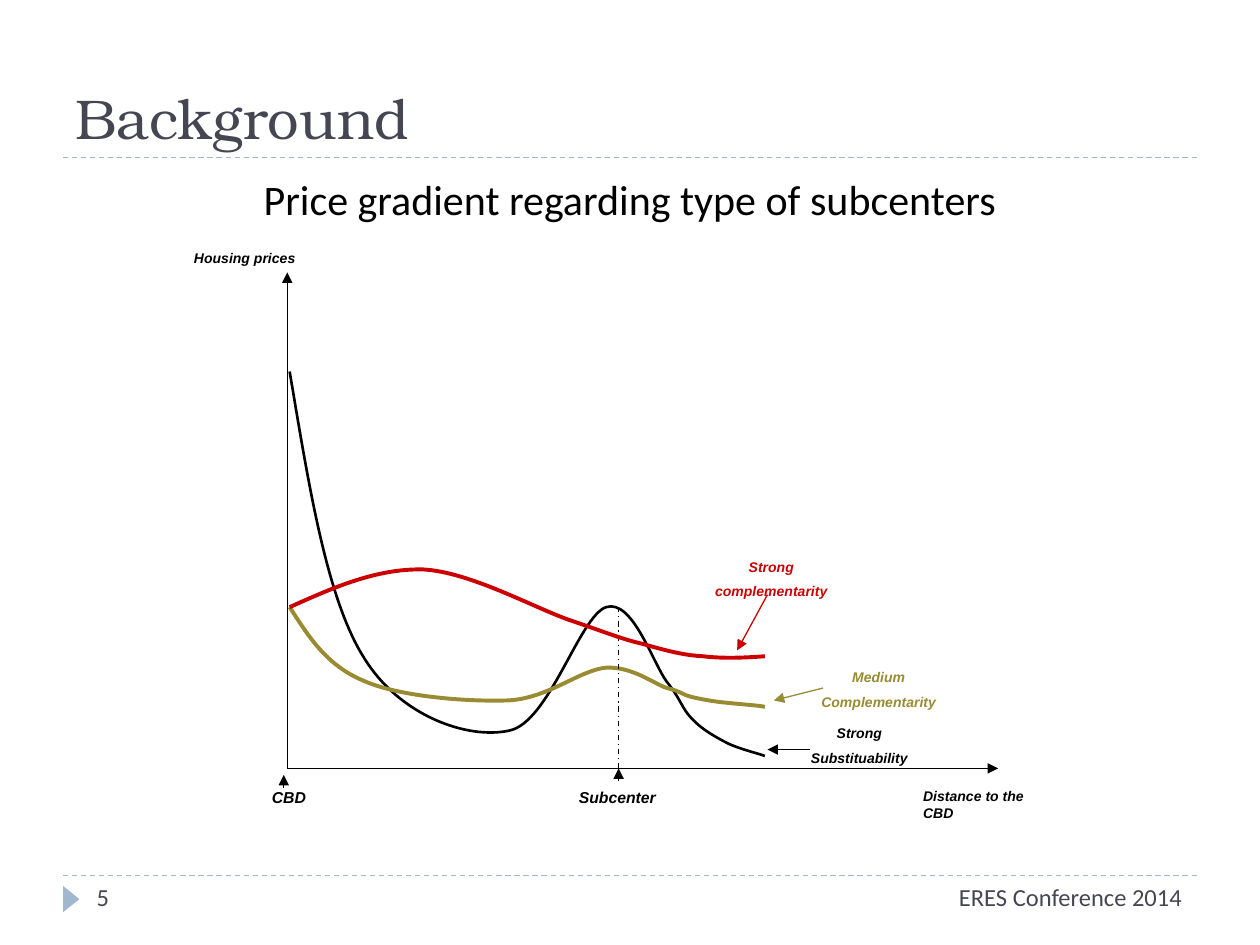
from dataclasses import dataclass

from lxml.etree import SubElement
from pptx import Presentation
from pptx.dml.color import RGBColor
from pptx.enum.dml import MSO_LINE
from pptx.enum.shapes import MSO_CONNECTOR, MSO_SHAPE
from pptx.enum.text import MSO_ANCHOR, PP_ALIGN
from pptx.oxml.ns import qn
from pptx.slide import Slide
from pptx.util import Cm, Pt

BLACK, RED, OLIVE = "000000", "CC0000", "988B32"
SLATE, BLUE = "464653", "9FB8CD"
LEFT, RIGHT = 1.27, 24.13
AXIS_X, AXIS_Y = 5.79, 15.49
SUBCENTER_X = 12.47

GRADIENT_X = [5.84, 6.22, 6.58, 7.32, 8.05, 9.45, 10.26, 11.07, 11.68, 12.22, 12.75,
              13.16, 13.44, 13.74, 13.74, 13.94, 14.15, 14.43, 14.68, 14.94, 15.29, 15.42]
SUBSTITUABILITY_Y = [7.49, 9.75, 12.04, 13.23, 14.45, 14.91, 14.73, 14.58, 12.42, 12.24, 12.07,
                     13.36, 13.74, 14.12, 14.27, 14.48, 14.71, 14.86, 14.99, 15.11, 15.19, 15.24]
MEDIUM_Y = [12.24, 12.83, 13.41, 13.72, 14.05, 14.15, 14.12, 14.07, 13.51, 13.46, 13.44,
            13.77, 13.87, 13.94, 14, 14.05, 14.1, 14.15, 14.17, 14.2, 14.22, 14.25]
COMPLEMENTARITY = [(5.84, 12.24), (6.73, 11.84), (7.59, 11.46), (8.53, 11.48),
                   (9.47, 11.53), (10.74, 12.24), (11.48, 12.5),
                   (12.22, 12.75), (12.52, 12.88), (12.95, 12.98),
                   (13.41, 13.11), (13.77, 13.21), (14.17, 13.23),
                   (14.58, 13.28), (15.01, 13.26), (15.42, 13.23)]


def color(value):
    return RGBColor.from_string(value)


@dataclass
class Canvas:
    slide: Slide
    body_font: str = "Calibri"
    title_font: str = "TeX Gyre Bonum"
    label_font: str = "Arial"
    thin: float = 0.75

    def text(self, box, lines, size, ink=SLATE, font=None, align=PP_ALIGN.LEFT,
             anchor=MSO_ANCHOR.TOP, emphasis=False):
        shape = self.slide.shapes.add_textbox(*map(Cm, box))
        frame = shape.text_frame
        frame.word_wrap = True
        frame.vertical_anchor = anchor
        frame.text = "\n".join(lines)
        for index, paragraph in enumerate(frame.paragraphs):
            paragraph.alignment = align
            if index:
                paragraph.space_before = Pt(4.5)
            paragraph.font.name = font or self.body_font
            paragraph.font.size = Pt(size)
            paragraph.font.bold = paragraph.font.italic = emphasis
            paragraph.font.color.rgb = color(ink)

    def label(self, box, lines, size=8, ink=BLACK, align=PP_ALIGN.CENTER):
        self.text(box, lines, size, ink, self.label_font, align, emphasis=True)

    def line(self, start, end, ink=BLACK, dash=None, arrow=False):
        connector = self.slide.shapes.add_connector(
            MSO_CONNECTOR.STRAIGHT, *map(Cm, start + end))
        connector.line.width = Pt(self.thin)
        connector.line.color.rgb = color(ink)
        if dash:
            connector.line.dash_style = dash
        if arrow:
            SubElement(connector.line._get_or_add_ln(), qn("a:tailEnd"), type="triangle")
        SubElement(connector._element.spPr, qn("a:effectLst"))

    def arrow(self, start, end, ink=BLACK):
        self.line(start, end, ink, arrow=True)

    def curve(self, points, ink, width):
        (first_x, first_y), *others = [(Cm(x), Cm(y)) for x, y in points]
        builder = self.slide.shapes.build_freeform(first_x, first_y)
        builder.add_line_segments(others, close=False)
        shape = builder.convert_to_shape()
        outline = next(shape._element.iter(qn("a:path")))
        segments = outline.findall(qn("a:lnTo"))
        for index in range(0, len(segments), 3):
            bezier = SubElement(outline, qn("a:cubicBezTo"))
            for segment in segments[index:index + 3]:
                bezier.append(segment[0])
                outline.remove(segment)
        shape.shadow.inherit = False
        shape.fill.background()
        shape.line.color.rgb = color(ink)
        shape.line.width = Pt(width)

    def marker(self, box):
        shape = self.slide.shapes.add_shape(MSO_SHAPE.ISOSCELES_TRIANGLE, *map(Cm, box))
        shape.rotation = 90
        shape.shadow.inherit = False
        shape.fill.solid()
        shape.fill.fore_color.rgb = color(BLUE)
        shape.line.fill.background()


def main():
    presentation = Presentation()
    presentation.slide_width, presentation.slide_height = Cm(25.4), Cm(19.05)
    canvas = Canvas(presentation.slides.add_slide(presentation.slide_layouts[6]))

    for y in (17.65, 3.18):
        canvas.line((LEFT, y), (RIGHT, y), BLUE, MSO_LINE.DASH)
    canvas.marker((1.17, 17.96, 0.53, 0.33))
    canvas.text((LEFT, 0.43, 22.86, 2.74), ["Background"], 32,
                font=canvas.title_font, anchor=MSO_ANCHOR.BOTTOM)
    canvas.text((7.29, 17.65, 16.79, 1.02), ["ERES Conference 2014"], 14, align=PP_ALIGN.RIGHT)
    canvas.text((1.7, 17.65, 5.51, 1.02), ["5"], 14)
    canvas.text((LEFT, 3.38, 22.86, 1.73), ["Price gradient regarding type of subcenters"],
                24, BLACK, align=PP_ALIGN.CENTER)

    canvas.arrow((AXIS_X, AXIS_Y), (AXIS_X, 5.49))
    canvas.label((3.66, 4.9, 2.69, 0.61), ["Housing prices"], align=PP_ALIGN.LEFT)
    canvas.arrow((AXIS_X, AXIS_Y), (20.12, AXIS_Y))
    canvas.label((18.36, 15.75, 2.69, 0.94), ["Distance to the CBD"], align=PP_ALIGN.LEFT)

    canvas.curve(list(zip(GRADIENT_X, SUBSTITUABILITY_Y)), BLACK, 1.5)
    canvas.curve(list(zip(GRADIENT_X, MEDIUM_Y)), OLIVE, 2.25)
    canvas.line((SUBCENTER_X, 12.24), (SUBCENTER_X, AXIS_Y), dash=MSO_LINE.DASH_DOT)
    canvas.curve(COMPLEMENTARITY, RED, 2.25)

    canvas.label((11.1, 15.75, 2.69, 0.64), ["Subcenter"], 9)
    canvas.label((4.72, 15.75, 2.21, 0.64), ["CBD"], 9)
    canvas.arrow((5.72, 15.88), (5.72, 15.62))
    canvas.arrow((SUBCENTER_X, 15.75), (SUBCENTER_X, AXIS_Y))

    for box, lines, ink, start, end in (
        ((14.1, 11.13, 2.9, 1.12), ["Strong", "complementarity"], RED,
         (15.47, 11.99), (14.86, 13.11)),
        ((15.98, 14.48, 2.69, 1.12), ["Strong", "Substituability"], BLACK,
         (16.33, 15.11), (15.47, 15.11)),
        ((16.23, 13.36, 2.97, 1.12), ["Medium", "Complementarity"], OLIVE,
         (16.59, 13.87), (15.6, 14.12)),
    ):
        canvas.label(box, lines, ink=ink)
        canvas.arrow(start, end, ink)

    presentation.save("out.pptx")


if __name__ == "__main__":
    main()
